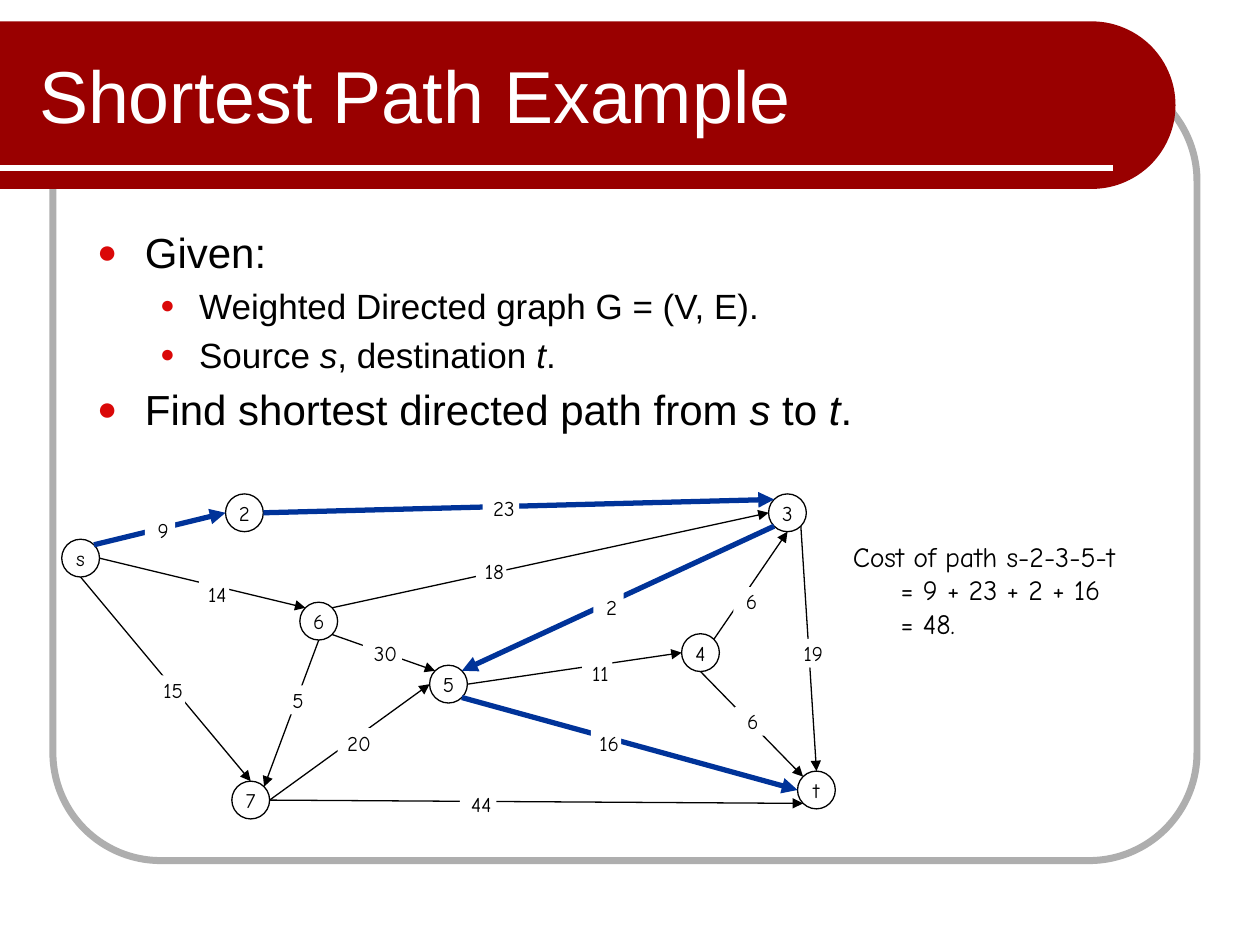
import math
from itertools import pairwise

from lxml import etree
from pptx import Presentation
from pptx import util as u
from pptx.dml.color import RGBColor
from pptx.enum import shapes, text
from pptx.oxml import ns

COLUMNS, ROWS = 100, 75
CELL = u.Inches(10) // COLUMNS
COLORS = {"banner": "990000", "frame": "AEAEAE", "bullet": "DA0808",
          "path": "003399", "ink": "000000", "paper": "FFFFFF"}
BODY_FONT, GRAPH_FONT = "Arial", "Comic Neue"
NODE_SIZE, LABEL_HEIGHT = 3, 2.3

NODES = {"s": (0, 3.6), "3": (56.1, 0), "t": (58.4, 22), "2": (13, 0),
         "6": (18.9, 8.6), "7": (13.5, 22.8), "4": (49.2, 11.1), "5": (29.2, 13.6)}
SHORTEST = set(pairwise("s235t"))
EDGES = [
    ("s", "NE", "2", "W", "9", (6.6, 1.7, 2.4)),
    ("s", "E", "6", "NW", "14", (10.9, 6.8, 2.4)),
    ("s", "S", "7", "N", "15", (7.4, 14.4, 2.4)),
    ("6", "NE", "3", "W", "18", (32.9, 5, 2.4)),
    ("4", "NE", "3", "S", "6", (53.3, 7.4, 2.4)),
    ("6", "SE", "5", "NW", "30", (23.9, 11.5, 3.1)),
    ("5", "SE", "t", "W", "16", (42, 18.6, 2.4)),
    ("5", "E", "4", "W", "11", (41.3, 13.1, 2.4)),
    ("4", "S", "t", "NW", "6", (53.4, 16.9, 2.4)),
    ("3", "SW", "5", "NE", "2", (42.2, 7.8, 2.4)),
    ("6", "S", "7", "NE", "5", (17.3, 15.2, 2.4)),
    ("7", "E", "5", "W", "20", (21.9, 18.6, 2.9)),
    ("2", "E", "3", "NW", "23", (33.4, 0, 2.9)),
    ("7", "E", "t", "SW", "44", (31.6, 23.5, 2.9)),
    ("3", "SE", "t", "N", "19", (58.2, 11.5, 2.4)),
]
COMPASS = {"E": 0, "SE": 45, "S": 90, "SW": 135, "W": 180, "NW": 225, "N": 270, "NE": 315}
GOALS = [(0, ["Given:"]),
         (1, ["Weighted Directed graph G = (V, E)."]),
         (1, ["Source ", "s", ", destination ", "t", "."]),
         (0, ["Find shortest directed path from ", "s", " to ", "t", "."])]
LEVELS = [{"size": 24, "margin": 0.38, "hang": 0.38, "bullet": 80},
          {"size": 20, "margin": 0.81, "hang": 0.31, "bullet": 70}]
COST = [("Cost of path s-2-3-5-t", 0), ("= 9 + 23 + 2 + 16", 0.38), ("= 48.", 0.38)]


def cells(*counts):
    return [round(count * CELL) for count in counts]


def apply(target, values):
    for name, value in values.items():
        setattr(target, name, value)


def rgb(name):
    return RGBColor.from_string(COLORS[name])


def place(shape, box):
    apply(shape, dict(zip(("left", "top", "width", "height"), cells(*box))))


def write(paragraph, words, face, size, color="ink", italic=False):
    run = paragraph.add_run()
    run.text = words
    apply(run.font, {"name": face, "size": u.Pt(size), "italic": italic})
    run.font.color.rgb = rgb(color)


def paint(shape, fill=None, line=None, width=0.75):
    shape.shadow.inherit = False
    if fill:
        shape.fill.solid()
        shape.fill.fore_color.rgb = rgb(fill)
    else:
        shape.fill.background()
    if line:
        shape.line.color.rgb = rgb(line)
        shape.line.width = u.Pt(width)
    else:
        shape.line.fill.background()


def connect(canvas, start, end, color, width, arrow=False):
    link = canvas.add_connector(shapes.MSO_CONNECTOR.STRAIGHT, *cells(*start, *end))
    link.line.color.rgb = rgb(color)
    link.line.width = u.Pt(width)
    if arrow:
        etree.SubElement(link.line._get_or_add_ln(), ns.qn("a:tailEnd"), type="triangle")
    etree.SubElement(link._element.spPr, ns.qn("a:effectLst"))


def caption(shape, words, left_inset=0):
    frame = shape.text_frame
    apply(frame, {"margin_left": u.Inches(left_inset), "margin_right": 0, "margin_top": 0,
                  "margin_bottom": 0, "word_wrap": False,
                  "vertical_anchor": text.MSO_ANCHOR.MIDDLE})
    frame.paragraphs[0].alignment = text.PP_ALIGN.CENTER
    write(frame.paragraphs[0], words, GRAPH_FONT, 12)


def add_frame(canvas, box):
    frame = canvas.add_shape(shapes.MSO_SHAPE.ROUNDED_RECTANGLE, *cells(*box))
    frame.adjustments[0] = 0.137
    paint(frame, line="frame", width=4)


def add_banner(canvas, box):
    left, top, width, height = box
    radius = height / 2
    center = left + width - radius
    arc = [(center + radius * math.cos(math.radians(angle)),
            top + radius + radius * math.sin(math.radians(angle)))
           for angle in range(-90, 91, 3)]
    outline = canvas.build_freeform(*cells(left, top))
    outline.add_line_segments([cells(*point) for point in arc + [(left, top + height)]])
    paint(outline.convert_to_shape(), fill="banner")
    rule = top + height * 0.875
    connect(canvas, (left, rule), (left + width - 5, rule), "paper", 3)


def fill_title(title, box):
    place(title, box)
    apply(title.text_frame, {"vertical_anchor": text.MSO_ANCHOR.MIDDLE,
                             "auto_size": text.MSO_AUTO_SIZE.NONE})
    heading = title.text_frame.paragraphs[0]
    heading.alignment = text.PP_ALIGN.LEFT
    write(heading, "Shortest Path Example", BODY_FONT, 42, "paper")


def add_bullet(paragraph, level):
    props = paragraph._p.get_or_add_pPr()
    props.set("marL", str(u.Inches(level["margin"])))
    props.set("indent", str(-u.Inches(level["hang"])))
    color = etree.SubElement(props, ns.qn("a:buClr"))
    etree.SubElement(color, ns.qn("a:srgbClr"), val=COLORS["bullet"])
    etree.SubElement(props, ns.qn("a:buSzPct"), val=str(level["bullet"] * 1000))
    etree.SubElement(props, ns.qn("a:buFont"), typeface=BODY_FONT)
    etree.SubElement(props, ns.qn("a:buChar"), char="●")


def fill_goals(body, box):
    place(body, box)
    frame = body.text_frame
    frame.auto_size = text.MSO_AUTO_SIZE.NONE
    for index, (depth, parts) in enumerate(GOALS):
        goal = frame.add_paragraph() if index else frame.paragraphs[0]
        goal.level = depth
        add_bullet(goal, LEVELS[depth])
        for position, words in enumerate(parts):
            write(goal, words, BODY_FONT, LEVELS[depth]["size"], italic=position % 2 == 1)


def add_cost(canvas, box):
    frame = canvas.add_textbox(*cells(*box)).text_frame
    apply(frame, {"word_wrap": True, "vertical_anchor": text.MSO_ANCHOR.MIDDLE})
    for index, (words, indent) in enumerate(COST):
        step = frame.add_paragraph() if index else frame.paragraphs[0]
        step._p.get_or_add_pPr().set("marL", str(u.Inches(indent)))
        write(step, words, GRAPH_FONT, 16)


def add_graph(canvas, box):
    left, top = box[:2]
    radius = NODE_SIZE / 2

    def anchor(node, side):
        x, y = NODES[node]
        angle = math.radians(COMPASS[side])
        return (left + x + radius + radius * math.cos(angle),
                top + y + radius + radius * math.sin(angle))

    for name, (x, y) in NODES.items():
        node = canvas.add_shape(shapes.MSO_SHAPE.OVAL,
                                *cells(left + x, top + y, NODE_SIZE, NODE_SIZE))
        paint(node, "paper", "ink")
        caption(node, name)
    for source, leave, target, enter, *_ in EDGES:
        color, width = ("path", 3) if (source, target) in SHORTEST else ("ink", 0.75)
        connect(canvas, anchor(source, leave), anchor(target, enter), color, width, arrow=True)
    for *_, weight, (x, y, width) in EDGES:
        label = canvas.add_shape(shapes.MSO_SHAPE.RECTANGLE,
                                 *cells(left + x, top + y, width, LABEL_HEIGHT))
        paint(label, "paper")
        caption(label, weight, left_inset=0.05)


def main():
    deck = Presentation()
    deck.slide_width, deck.slide_height = cells(COLUMNS, ROWS)
    slide = deck.slides.add_slide(deck.slide_layouts[1])
    title, goals = slide.placeholders
    canvas = slide.shapes
    add_frame(canvas, (4.2, 5.8, 90.8, 62.5))
    add_banner(canvas, (0, 1.7, 93.3, 13.3))
    for placeholder in (title, goals):
        canvas._spTree.append(placeholder._element)
    fill_title(title, (2.1, 2.5, 77.9, 10))
    fill_goals(goals, (6.7, 17.5, 86.7, 48.3))
    add_cost(canvas, (66.7, 41.7, 27.3, 10.2))
    add_graph(canvas.add_group_shape().shapes, (4.9, 39.2, 61.4, 25.8))
    deck.save("out.pptx")


if __name__ == "__main__":
    main()
